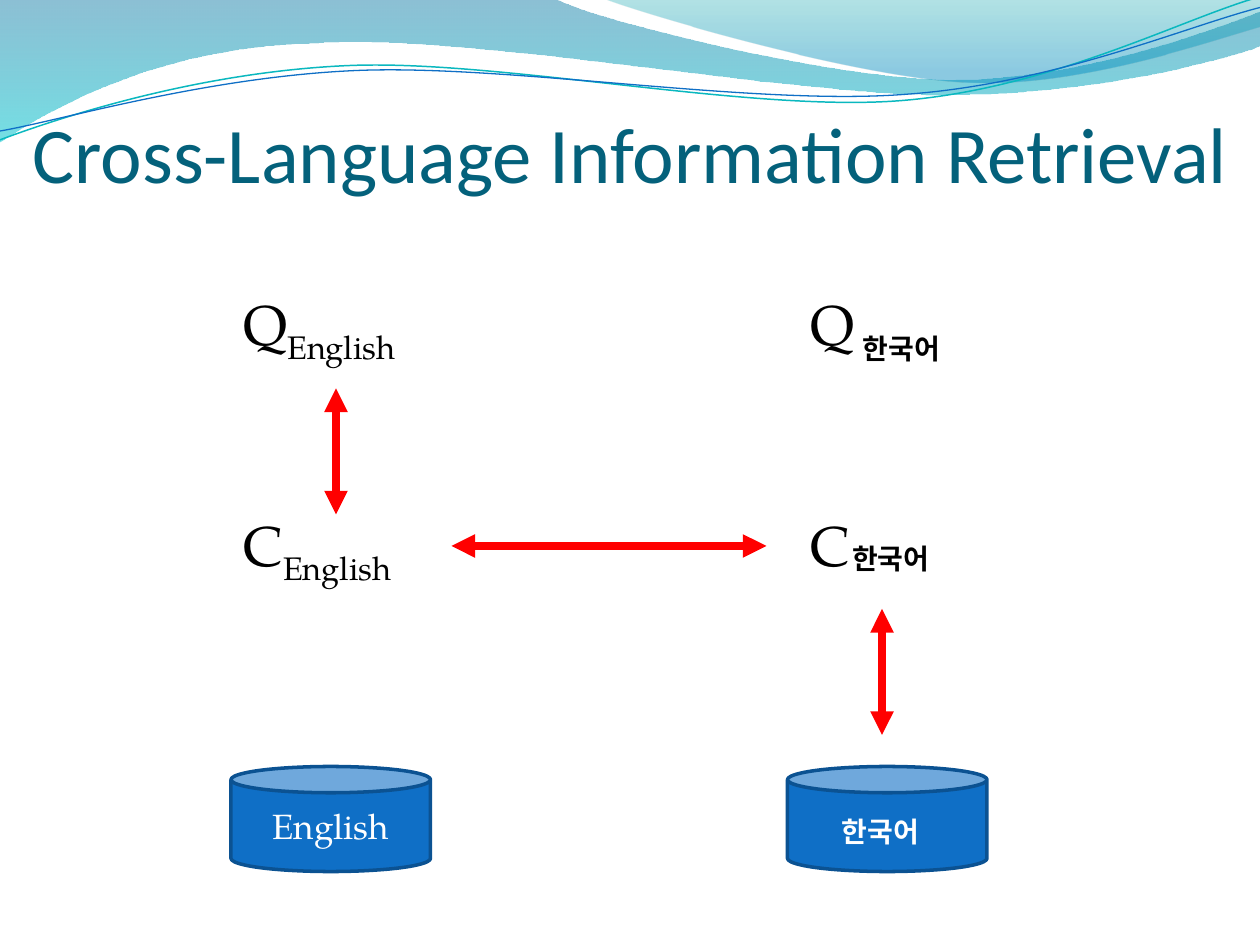
import math
from dataclasses import dataclass

from lxml import etree
from pptx import Presentation, util as u
from pptx.dml.color import RGBColor
from pptx.enum import shapes, text
from pptx.oxml.ns import qn


@dataclass(frozen=True)
class Theme:
    title_font: str = "Calibri"
    body_font: str = "TeX Gyre Pagella"
    title_size: float = 45
    symbol_size: float = 32
    label_size: float = 20
    korean_size: float = 16
    title: str = "04617B"
    ink: str = "000000"
    light: str = "FFFFFF"
    can: str = "0F6FC6"
    can_edge: str = "0B5292"
    arrow: str = "FF0000"
    teal_line: str = "0AB8BF"
    # Gradient stops: position, colour, opacity in percent
    left_wave: tuple = ((0, "0074A1", 45), (1, "00C6CF", 55))
    right_wave: tuple = ((0, "00A1A9", 30), (0.8, "008BBF", 45))


THEME = Theme()
CELL = u.Inches(1) / 12  # the slide is a grid of 120 columns by 90 rows
COLUMNS, ROWS = 120, 90
TILT = 2.7  # degrees by which the ripples rise to the right


def grid(*cells):
    return [u.Emu(round(cell * CELL)) for cell in cells]


def rgb(colour):
    return RGBColor.from_string(colour)


def child(parent, tag, **attributes):
    return etree.SubElement(parent, qn(tag), attributes)


# ---- Wave header ----
def add_outline(page, pieces, closed):
    """Draw pieces of one point (a line) or three points (a curve)."""
    points = [(u.Inches(x), u.Inches(y)) for piece in pieces for x, y in piece]
    builder = page.shapes.build_freeform(*points[0])
    builder.add_line_segments(points[1:], close=closed)
    outline = builder.convert_to_shape()
    outline.shadow.inherit = False
    # Each run of three points becomes one cubic curve
    lines = iter(list(outline._element.iter(qn("a:lnTo"))))
    for piece in pieces[1:]:
        group = [next(lines) for _ in piece]
        if len(group) == 3:
            curve = etree.Element(qn("a:cubicBezTo"))
            group[0].addprevious(curve)
            for line in group:
                curve.append(line[0])
                line.getparent().remove(line)
    return outline


def add_wave(page, pieces, stops):
    wave = add_outline(page, pieces, True)
    wave.line.fill.background()
    wave.fill.gradient()
    wave.fill.gradient_angle = 270
    for stop, (position, colour, _) in zip(wave.fill.gradient_stops, stops):
        stop.position = position
        stop.color.rgb = rgb(colour)
    colours = wave.fill._xPr.iter(qn("a:srgbClr"))
    for element, (_, _, opacity) in zip(colours, stops):
        child(element, "a:alpha", val=str(opacity * 1000))


def turn(point, centre, degrees):
    x, y = point[0] - centre[0], point[1] - centre[1]
    cos, sin = math.cos(math.radians(degrees)), math.sin(math.radians(degrees))
    return centre[0] + x * cos - y * sin, centre[1] + x * sin + y * cos


def add_ripple(page, pieces, centre, colour, width):
    level = [[turn(point, centre, TILT) for point in piece] for piece in pieces]
    ripple = add_outline(page, level, False)
    ripple.rotation = -TILT
    ripple.fill.background()
    ripple.line.color.rgb = rgb(colour)
    ripple.line.width = u.Pt(width)


def add_header(page):
    add_wave(page, (
        ((0, 0),), ((4.4, -0.01),),
        ((4.76, 0.17), (6.64, 0.63), (7.58, 0.63)),
        ((8.53, 0.63), (9.58, 0.26), (10, 0.09)), ((10.01, 0.36),),
        ((9.83, 0.44), (8.7, 0.76), (7.46, 0.75)),
        ((6.22, 0.75), (3.82, 0.28), (2.57, 0.34)),
        ((1.29, 0.36), (0.46, 0.83), (-0.01, 1.13))), THEME.left_wave)
    add_wave(page, (
        ((4.79, -0.01),),
        ((5.09, 0.11), (6.82, 0.62), (7.69, 0.65)),
        ((8.56, 0.69), (9.61, 0.32), (10, 0.21)), ((10, 0),)), THEME.right_wave)
    add_ripple(page, (
        ((0, 1.11),),
        ((0.48, 0.93), (1.58, 0.57), (2.77, 0.52)),
        ((3.95, 0.47), (5.93, 0.89), (7.13, 0.8)),
        ((8.33, 0.71), (9.38, 0.15), (9.98, -0.02))),
        (4.99, 0.58), THEME.teal_line, 0.85)
    add_ripple(page, (
        ((0, 1.04),),
        ((0.47, 0.96), (1.64, 0.61), (2.83, 0.56)),
        ((4.03, 0.51), (5.97, 0.84), (7.17, 0.75)),
        ((8.36, 0.67), (9.41, 0.21), (10, 0.06))),
        (5, 0.59), THEME.can, 0.75)


# ---- Text ----
def style(para, size, colour, font=THEME.body_font, bold=False):
    para.font.name, para.font.size = font, u.Pt(size)
    para.font.color.rgb, para.font.bold = rgb(colour), bold


def add_text(page, box, words, size, colour, subscript="", wrap=True, **font):
    label = page.shapes.add_textbox(*grid(*box))
    label.text_frame.word_wrap = wrap
    para = label.text_frame.paragraphs[0]
    para.add_run().text = words
    if subscript:
        span = para.add_run()
        span.text = subscript
        span.font._element.set("baseline", "-25000")
    style(para, size, colour, **font)
    return label


def add_title(page, box):
    title = add_text(page, box, "Cross-Language Information Retrieval",
                     THEME.title_size, THEME.title, font=THEME.title_font)
    frame = title.text_frame
    frame.margin_left = frame.margin_right = frame.margin_bottom = 0
    frame.vertical_anchor = text.MSO_ANCHOR.BOTTOM
    frame.paragraphs[0].alignment = text.PP_ALIGN.CENTER


# ---- Language columns: query, concept and document store ----
def add_symbols(page, left, top, widths, subscript=""):
    for row, symbol, width in zip((0, 21), "QC", widths):
        add_text(page, (left, top + row, width, 7.7), symbol,
                 THEME.symbol_size, THEME.ink, subscript, wrap=False)


def add_store(page, box, name=""):
    can = page.shapes.add_shape(shapes.MSO_SHAPE.CAN, *grid(*box))
    can.shadow.inherit = False
    can.fill.solid()
    can.fill.fore_color.rgb = rgb(THEME.can)
    can.line.color.rgb = rgb(THEME.can_edge)
    can.line.width = u.Pt(2)
    if name:
        can.text_frame.text = name
        para = can.text_frame.paragraphs[0]
        para.alignment = text.PP_ALIGN.CENTER
        style(para, THEME.label_size, THEME.light)


def add_english(page, left, top):
    add_symbols(page, left, top, (18.2, 17.4), "English")
    add_store(page, (left, top + 46, 19, 10), "English")


def add_korean(page, left, top):
    add_symbols(page, left + 1, top, (6.7, 5.9))
    add_store(page, (left, top + 46, 19, 10))
    for column, row, colour in ((6, 4, THEME.ink), (4, 50, THEME.light),
                                (5, 24, THEME.ink)):
        add_text(page, (left + column, top + row, 11, 4.4), "한국어",
                 THEME.korean_size, colour, bold=True)


# ---- Arrows ----
def add_arrow(page, *ends):
    arrow = page.shapes.add_connector(shapes.MSO_CONNECTOR.STRAIGHT, *grid(*ends))
    arrow.line.color.rgb = rgb(THEME.arrow)
    arrow.line.width = u.Pt(4.5)
    outline = arrow.line._get_or_add_ln()
    for end in ("a:headEnd", "a:tailEnd"):
        child(outline, end, type="triangle")
    child(arrow._element.spPr, "a:effectLst")


def main():
    deck = Presentation()
    deck.slide_width, deck.slide_height = grid(COLUMNS, ROWS)
    page = deck.slides.add_slide(deck.slide_layouts[6])
    add_header(page)
    add_title(page, (0, 9, COLUMNS, 10))
    add_english(page, 22, 27)
    add_korean(page, 75, 27)
    for ends in ((43, 52, 73, 52), (32, 37, 32, 49), (84, 58, 84, 70)):
        add_arrow(page, *ends)
    deck.save("out.pptx")


if __name__ == "__main__":
    main()
